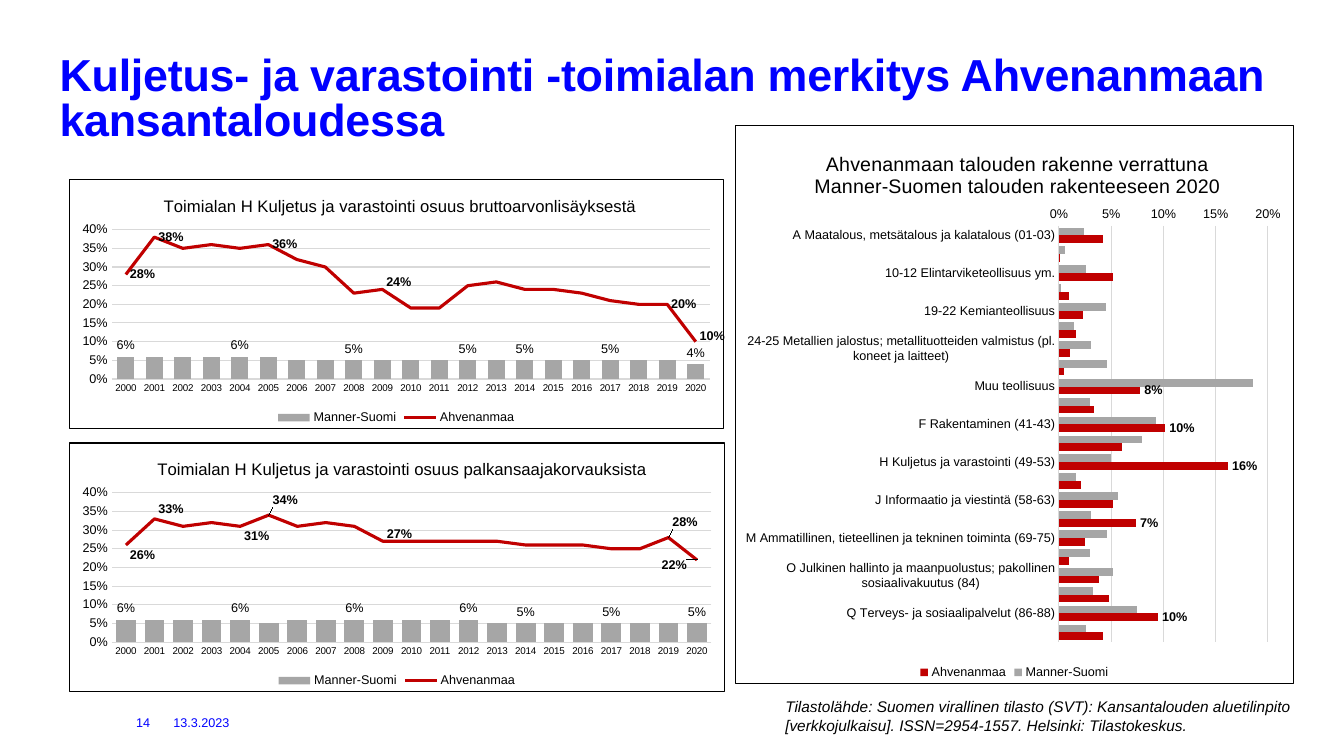
"""Builds a slide on the transport sector's weight in the Åland economy."""
from dataclasses import dataclass, field

from pptx import Presentation
from pptx.chart.chart import Chart
from pptx.chart.data import CategoryChartData as ChartData
from pptx.dml.color import RGBColor
from pptx.enum.chart import XL_CHART_TYPE as ChartType
from pptx.enum.chart import XL_LABEL_POSITION as LabelPosition
from pptx.enum.chart import XL_LEGEND_POSITION as LegendPosition
from pptx.enum.chart import XL_MARKER_STYLE as MarkerStyle
from pptx.enum.chart import XL_TICK_MARK as TickMark
from pptx.enum.text import MSO_ANCHOR as Anchor
from pptx.enum.text import MSO_AUTO_SIZE as AutoSize
from pptx.enum.text import PP_ALIGN as Align
from pptx.oxml import parse_xml
from pptx.oxml.ns import nsdecls, qn
from pptx.util import Inches, Pt


@dataclass(frozen=True)
class Theme:
    font: str = "Arial"
    blue: RGBColor = RGBColor(0, 0, 255)
    black: RGBColor = RGBColor(0, 0, 0)
    red: RGBColor = RGBColor(192, 0, 0)
    gray: RGBColor = RGBColor(166, 166, 166)
    grid: RGBColor = RGBColor(217, 217, 217)
    title: float = 32
    source: float = 11
    chart: float = 10
    label: float = 9
    years: float = 7
    hairline: float = 0.75


@dataclass(frozen=True)
class Frame:
    """Position and size as percentages of the slide."""
    left: float
    top: float
    width: float
    height: float

    def box(self) -> tuple[int, int, int, int]:
        return (int(WIDTH * self.left / 100), int(HEIGHT * self.top / 100),
                int(WIDTH * self.width / 100), int(HEIGHT * self.height / 100))


@dataclass(frozen=True)
class ChartPlan:
    frame: Frame
    title: str
    title_size: float
    title_at: tuple[float, float]
    plot_area: tuple[float, float, float, float]
    gap: int
    top_value: float
    categories: list[str]
    mainland: list[float]
    aland: list[float]
    aland_labels: dict[int, tuple[float, float]]
    mainland_labels: list[int] = field(default_factory=list)
    trend: bool = False


THEME = Theme()
WIDTH, HEIGHT = Inches(13.33), Inches(7.5)
YEARS = [str(year) for year in range(2000, 2021)]
INDUSTRIES = [
    "A Maatalous, metsätalous ja kalatalous (01-03)", "B Kaivostoiminta ja louhinta (05-09)",
    "10-12 Elintarviketeollisuus ym.",
    "16-18 Sahatavaran ja paperin sekä paperituotteiden valmistus; painaminen ja jäljentäminen",
    "19-22 Kemianteollisuus", "24-30 Metalliteollisuus",
    "24-25 Metallien jalostus; metallituotteiden valmistus (pl. koneet ja laitteet)",
    "26, 27 Sähkö- ja elektroniikkateollisuus", "Muu teollisuus",
    "D, E Sähkö-, kaasu-, lämpö-, vesi-, viemäri- ja jätevesihuolto (35-39)",
    "F Rakentaminen (41-43)",
    "G Tukku- ja vähittäiskauppa; moottoriajoneuvojen ja moottoripyörien korjaus (45-47)",
    "H Kuljetus ja varastointi (49-53)", "I Majoitus- ja ravitsemistoiminta (55-56)",
    "J Informaatio ja viestintä (58-63)", "K Rahoitus- ja vakuutustoiminta (64-66)",
    "M Ammatillinen, tieteellinen ja tekninen toiminta (69-75)",
    "N Hallinto- ja tukipalvelutoiminta (77-82)",
    "O Julkinen hallinto ja maanpuolustus; pakollinen sosiaalivakuutus (84)",
    "P Koulutus (85)", "Q Terveys- ja sosiaalipalvelut (86-88)", "R, S Muut palvelut (90-96)"]
HERE = (0, 0)
TREND = dict(title_size=12, plot_area=(0.065, 0.2, 0.915, 0.6), top_value=0.4,
             categories=YEARS, mainland_labels=[0, 4, 8, 12, 14, 17, 20], trend=True)
PLANS = [
    ChartPlan(
        Frame(54.69, 16.53, 41.56, 74),
        "Ahvenanmaan talouden rakenne verrattuna Manner-Suomen talouden rakenteeseen 2020",
        14, (0.135, 0.04), (0.58, 0.18, 0.375, 0.745), 43, 0.2, INDUSTRIES,
        [.024, .006, .026, .002, .045, .014, .031, .046, .186, .03, .093,
         .08, .05, .016, .057, .031, .046, .03, .052, .033, .075, .026],
        [.042, .001, .052, .01, .023, .016, .011, .005, .078, .034, .102,
         .06, .162, .021, .052, .074, .025, .01, .038, .048, .095, .042],
        dict.fromkeys([8, 10, 12, 15, 20], HERE)),
    ChartPlan(
        Frame(5.1, 23.73, 48.84, 33.07),
        "Toimialan H Kuljetus ja varastointi osuus bruttoarvonlisäyksestä",
        title_at=(0.14, 0.05), gap=70, mainland=[.06] * 6 + [.05] * 14 + [.04],
        aland=[.28, .38, .35, .36, .35, .36, .32, .3, .23, .24, .19,
               .19, .25, .26, .24, .24, .23, .21, .2, .2, .1],
        aland_labels={0: HERE, 1: HERE, 5: HERE, 9: (0, -0.03), 19: HERE, 20: (0, -0.02)},
        **TREND),
    ChartPlan(
        Frame(5.1, 58.53, 48.84, 33.07),
        "Toimialan H Kuljetus ja varastointi osuus palkansaajakorvauksista",
        title_at=(0.13, 0.05), gap=44, mainland=[.06] * 5 + [.05] + [.06] * 7 + [.05] * 8,
        aland=[.26, .33, .31, .32, .31, .34, .31, .32, .31, .27, .27,
               .27, .27, .27, .26, .26, .26, .25, .25, .28, .22],
        aland_labels={0: (0, 0.04), 1: (0, -0.04), 4: (0, 0.04), 5: (0, -0.06),
                      9: (0, -0.03), 19: (0, -0.06), 20: (-0.06, 0.02)},
        **TREND),
]


def style_font(font, size: float, color: RGBColor = THEME.black, bold=False, italic=False) -> None:
    font.name, font.size, font.bold, font.italic = THEME.font, Pt(size), bold, italic
    font.color.rgb = color


def manual_layout(x: float, y: float, size: tuple[float, ...] = (), edge: bool = True):
    modes = '<c:xMode val="edge"/><c:yMode val="edge"/>' if edge else ""
    target = '<c:layoutTarget val="inner"/>' if size else ""
    extent = '<c:w val="{}"/><c:h val="{}"/>'.format(*size) if size else ""
    return parse_xml(f'<c:layout {nsdecls("c")}><c:manualLayout>{target}{modes}'
                     f'<c:x val="{x}"/><c:y val="{y}"/>{extent}</c:manualLayout></c:layout>')


def replace_layout(parent, layout, after: str = "") -> None:
    for previous in parent.findall(qn("c:layout")):
        parent.remove(previous)
    if after:
        parent.find(qn(after)).addnext(layout)
    else:
        parent.insert(0, layout)


def turn_last_series_into_line(chart: Chart) -> None:
    bars = chart.plots[0]._element
    series = bars.findall(qn("c:ser"))[-1]
    for flag in series.findall(qn("c:invertIfNegative")):
        series.remove(flag)
    axes = "".join(f'<c:axId val="{axis.get("val")}"/>' for axis in bars.findall(qn("c:axId")))
    line = parse_xml(f'<c:lineChart {nsdecls("c")}><c:grouping val="standard"/>'
                     f'<c:varyColors val="0"/><c:marker val="1"/>{axes}</c:lineChart>')
    line.insert(2, series)
    bars.addnext(line)


def label_points(series, offsets: dict, position: LabelPosition, bold: bool) -> None:
    series.data_labels.show_value = False
    for index, offset in offsets.items():
        label = series.points[index].data_label
        style_font(label.font, THEME.label, bold=bold)
        label.position = position
        if offset != HERE:
            element = series.data_labels._element.xpath(f'c:dLbl[c:idx/@val="{index}"]')[0]
            replace_layout(element, manual_layout(*offset, edge=False), "c:idx")


def style_axes(chart: Chart, plan: ChartPlan) -> None:
    category, value = chart.category_axis, chart.value_axis
    for axis in (category, value):
        axis.major_tick_mark = axis.minor_tick_mark = TickMark.NONE
        style_font(axis.tick_labels.font, THEME.label)
    category.tick_labels.font.size = Pt(THEME.years if plan.trend else THEME.label)
    category.reverse_order = not plan.trend
    category.has_major_gridlines = False
    value.has_major_gridlines = True
    value.minimum_scale, value.maximum_scale, value.major_unit = 0, plan.top_value, 0.05
    value.tick_labels.number_format = "0%"
    value.tick_labels.number_format_is_linked = False
    value.format.line.fill.background()
    for line in (category.format.line, value.major_gridlines.format.line):
        line.color.rgb, line.width = THEME.grid, Pt(THEME.hairline)


def draw_chart(slide, plan: ChartPlan) -> None:
    data = ChartData(number_format="0%")
    data.categories = plan.categories
    data.add_series("Manner-Suomi", plan.mainland)
    data.add_series("Ahvenanmaa", plan.aland)
    kind = ChartType.COLUMN_CLUSTERED if plan.trend else ChartType.BAR_CLUSTERED
    chart = slide.shapes.add_chart(kind, *plan.frame.box(), data).chart
    style_font(chart.font, THEME.chart)
    chart.has_title = True
    chart.chart_title.include_in_layout = False
    chart.chart_title.text_frame.text = plan.title
    style_font(chart.chart_title.text_frame.paragraphs[0].runs[0].font, plan.title_size)
    replace_layout(chart.chart_title._element, manual_layout(*plan.title_at), "c:tx")
    chart.has_legend = True
    chart.legend.position, chart.legend.include_in_layout = LegendPosition.BOTTOM, False
    style_font(chart.legend.font, THEME.label)
    bars = chart.plots[0]
    bars.gap_width, bars.overlap, bars.vary_by_categories = plan.gap, 0, False
    style_axes(chart, plan)
    if plan.trend:
        turn_last_series_into_line(chart)
    mainland, aland = (series for plot in chart.plots for series in plot.series)
    mainland.format.fill.solid()
    mainland.format.fill.fore_color.rgb = THEME.gray
    if plan.trend:
        aland.smooth, aland.marker.style = False, MarkerStyle.NONE
        aland.format.line.color.rgb, aland.format.line.width = THEME.red, Pt(2.25)
        label_points(mainland, dict.fromkeys(plan.mainland_labels, HERE),
                     LabelPosition.OUTSIDE_END, False)
    else:
        aland.format.fill.solid()
        aland.format.fill.fore_color.rgb = THEME.red
    label_points(aland, plan.aland_labels,
                 LabelPosition.RIGHT if plan.trend else LabelPosition.OUTSIDE_END, True)
    x, y, *size = plan.plot_area
    body = chart.element.find(qn("c:chart"))
    replace_layout(body.find(qn("c:plotArea")), manual_layout(x, y, tuple(size)))
    body.addnext(parse_xml(
        f'<c:spPr {nsdecls("c", "a")}><a:solidFill><a:srgbClr val="FFFFFF"/></a:solidFill>'
        f'<a:ln w="{Pt(THEME.hairline)}"><a:solidFill><a:srgbClr val="{THEME.black}"/>'
        '</a:solidFill></a:ln></c:spPr>'))


def draw_text(slide, frame: Frame, text: str, size: float, color: RGBColor, source=False) -> None:
    text_frame = slide.shapes.add_textbox(*frame.box()).text_frame
    text_frame.word_wrap, text_frame.text = True, text
    if not source:
        text_frame.vertical_anchor = Anchor.MIDDLE
        text_frame.margin_left = text_frame.margin_right = 0
        text_frame.margin_top = text_frame.margin_bottom = 0
    style_font(text_frame.paragraphs[0].runs[0].font, size, color, italic=source)


def draw_title(slide, frame: Frame, text: str) -> None:
    title = slide.shapes.title
    title.left, title.top, title.width, title.height = frame.box()
    text_frame = title.text_frame
    text_frame.text, text_frame.word_wrap = text, True
    text_frame.auto_size, text_frame.vertical_anchor = AutoSize.NONE, Anchor.BOTTOM
    text_frame.margin_left = text_frame.margin_right = 0
    text_frame.margin_top = text_frame.margin_bottom = 0
    paragraph = text_frame.paragraphs[0]
    paragraph.alignment, paragraph.line_spacing = Align.LEFT, 0.85
    style_font(paragraph.runs[0].font, THEME.title, THEME.blue, bold=True)
    paragraph.runs[0].font._element.set("spc", "-20")


def main() -> None:
    presentation = Presentation()
    presentation.slide_width, presentation.slide_height = WIDTH, HEIGHT
    slide = presentation.slides.add_slide(presentation.slide_layouts[5])
    draw_title(slide, Frame(4.43, 5.2, 91, 14.13),
               "Kuljetus- ja varastointi -toimialan merkitys Ahvenanmaan kansantaloudessa")
    draw_text(slide, Frame(12.9, 94.27, 6, 2.67), "13.3.2023", THEME.label, THEME.blue)
    draw_text(slide, Frame(10.13, 94.27, 2.63, 2.67), "14", THEME.label, THEME.blue)
    for plan in PLANS:
        draw_chart(slide, plan)
    draw_text(slide, Frame(57.69, 91.6, 40.51, 6.27),
              "Tilastolähde: Suomen virallinen tilasto (SVT): Kansantalouden aluetilinpito "
              "[verkkojulkaisu]. ISSN=2954-1557. Helsinki: Tilastokeskus.",
              THEME.source, THEME.black, source=True)
    presentation.save("out.pptx")


if __name__ == "__main__":
    main()
